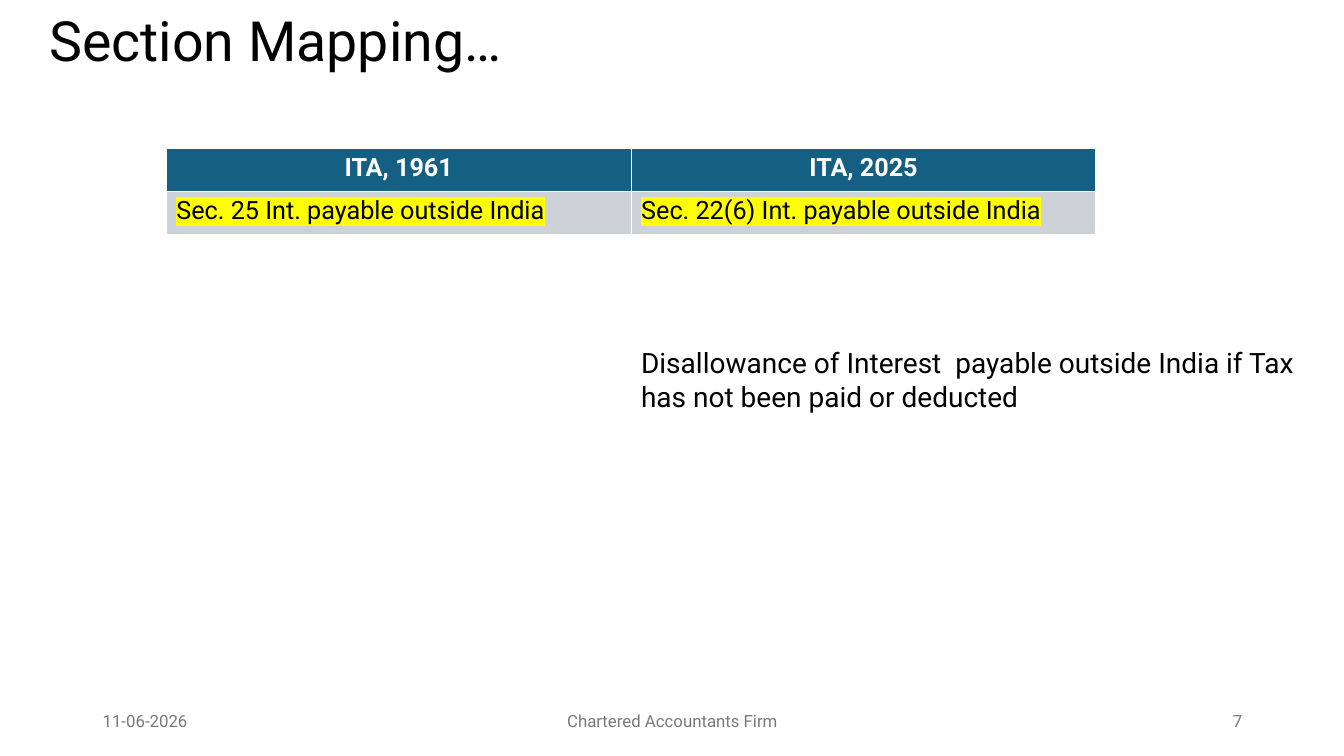
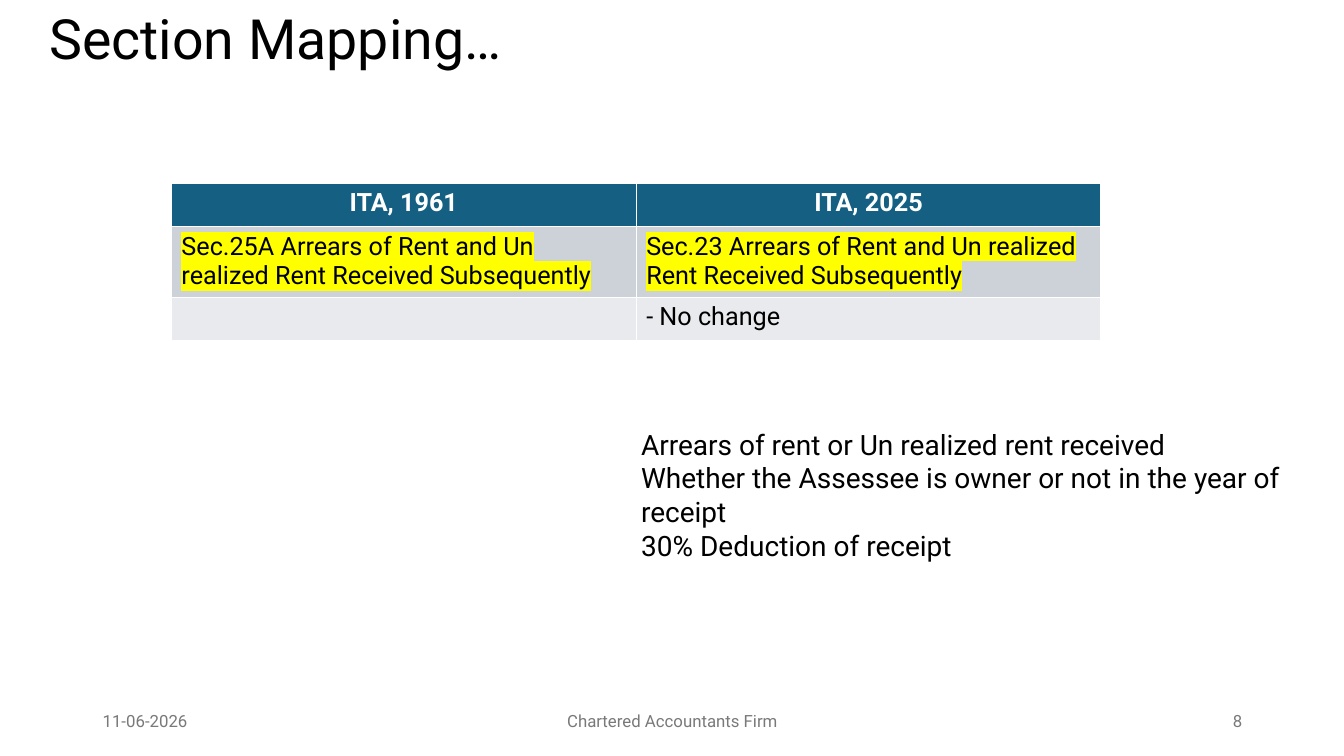
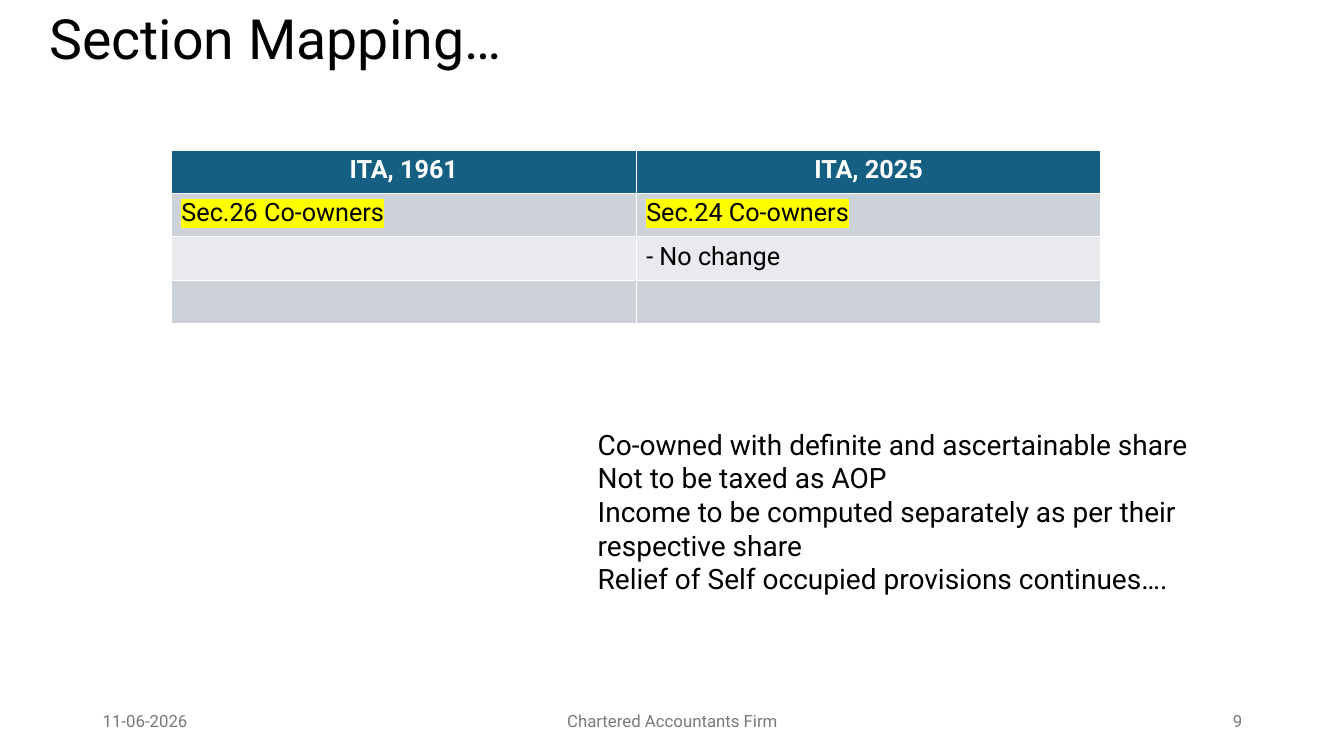
"""Build three section-mapping slides comparing the 1961 and 2025 Acts."""
from lxml import etree
from pptx import Presentation
from pptx.dml.color import RGBColor
from pptx.enum.text import MSO_ANCHOR, MSO_AUTO_SIZE, PP_ALIGN
from pptx.oxml.ns import qn
from pptx.util import Inches, Pt

LEFT, CENTER, RIGHT = PP_ALIGN.LEFT, PP_ALIGN.CENTER, PP_ALIGN.RIGHT
MIDDLE = MSO_ANCHOR.MIDDLE
NO_FIT, GROW = MSO_AUTO_SIZE.NONE, MSO_AUTO_SIZE.SHAPE_TO_FIT_TEXT

FONT = "Roboto"
BLACK = RGBColor(0x00, 0x00, 0x00)
WHITE = RGBColor(0xFF, 0xFF, 0xFF)
TEAL = RGBColor(0x15, 0x60, 0x82)
BAND_DARK = RGBColor(0xCC, 0xD2, 0xD8)
BAND_LIGHT = RGBColor(0xE8, 0xEA, 0xED)
GRAY = RGBColor(0x79, 0x79, 0x79)
YELLOW = RGBColor(0xFF, 0xFF, 0x00)

TITLE = "Section Mapping…"
HEADER = ("ITA, 1961", "ITA, 2025")
DATE = "11-06-2026"
FIRM = "Chartered Accountants Firm"
FIRST_NUMBER = 7
COLUMN_WIDTH = 4.61
ROW_HEIGHT = 0.43
NOTES_RIGHT = 13

PAGES = [
    {
        "title_size": (10.53, 0.68),
        "table_at": (1.65, 1.47),
        "section_height": ROW_HEIGHT,
        "rows": [("Sec. 25 Int. payable outside India",
                  "Sec. 22(6) Int. payable outside India")],
        "points_at": (6.26, 3.38, 0.77),
        "points": ["Disallowance of Interest  payable outside India "
                   "if Tax has not been paid or deducted"],
    },
    {
        "title_size": (10.07, 0.64),
        "table_at": (1.7, 1.82),
        "section_height": 0.7,
        "rows": [("Sec.25A Arrears of Rent and Un realized Rent Received Subsequently",
                  "Sec.23 Arrears of Rent and Un realized Rent Received Subsequently"),
                 ("", "- No change")],
        "points_at": (6.26, 4.19, 1.45),
        "points": ["Arrears of rent or Un realized rent received",
                   "Whether the Assessee is owner or not in the year of receipt",
                   "30% Deduction of receipt"],
    },
    {
        "title_size": (10.07, 0.64),
        "table_at": (1.7, 1.49),
        "section_height": ROW_HEIGHT,
        "rows": [("Sec.26 Co-owners", "Sec.24 Co-owners"),
                 ("", "- No change"),
                 ("", "")],
        "points_at": (5.83, 4.19, 1.78),
        "points": ["Co-owned with definite and ascertainable share",
                   "Not to be taxed as AOP",
                   "Income to be computed separately as per their respective share",
                   "Relief of Self occupied provisions continues…."],
    },
]


def write(frame, text, size, color, align=LEFT, bold=False):
    frame.text = text
    frame.word_wrap = True
    for paragraph in frame.paragraphs:
        paragraph.alignment = align
        for span in paragraph.runs:
            span.font.name = FONT
            span.font.size = Pt(size)
            span.font.bold = bold
            span.font.color.rgb = color


def highlight(frame):
    for span in frame.paragraphs[0].runs:
        mark = etree.Element(qn("a:highlight"))
        etree.SubElement(mark, qn("a:srgbClr"), val=str(YELLOW))
        span.font._element.find(qn("a:solidFill")).addnext(mark)


deck = Presentation()
deck.slide_width = Inches(13.33)
deck.slide_height = Inches(7.5)
title_only = deck.slide_layouts[5]

for number, content in enumerate(PAGES, FIRST_NUMBER):
    page = deck.slides.add_slide(title_only)

    title = page.shapes.title
    title.left, title.top = Inches(0.39), Inches(0.09)
    title.width, title.height = map(Inches, content["title_size"])
    write(title.text_frame, TITLE, 39.6, BLACK)
    title.text_frame.auto_size = NO_FIT
    title.text_frame.vertical_anchor = MIDDLE
    title.text_frame.paragraphs[0].line_spacing = 0.9

    rows = [HEADER] + content["rows"]
    heights = [ROW_HEIGHT] * len(rows)
    heights[1] = content["section_height"]
    left, top = content["table_at"]
    table = page.shapes.add_table(
        len(rows), len(HEADER), Inches(left), Inches(top),
        Inches(COLUMN_WIDTH * len(HEADER)), Inches(sum(heights))).table
    for column in table.columns:
        column.width = Inches(COLUMN_WIDTH)
    for row_index, texts in enumerate(rows):
        table.rows[row_index].height = Inches(heights[row_index])
        is_header = row_index == 0
        band = BAND_DARK if row_index % 2 else BAND_LIGHT
        for column_index, text in enumerate(texts):
            cell = table.cell(row_index, column_index)
            cell.fill.solid()
            cell.fill.fore_color.rgb = TEAL if is_header else band
            write(cell.text_frame, text, 18, WHITE if is_header else BLACK,
                  CENTER if is_header else LEFT, is_header)
            if row_index == 1:
                highlight(cell.text_frame)

    for left, width, text, align in [(0.92, 3, DATE, LEFT),
                                     (4.42, 4.5, FIRM, CENTER),
                                     (9.42, 3, str(number), RIGHT)]:
        footer = page.shapes.add_textbox(
            Inches(left), Inches(6.95), Inches(width), Inches(0.4))
        write(footer.text_frame, text, 12, GRAY, align)
        footer.text_frame.vertical_anchor = MIDDLE

    left, top, height = content["points_at"]
    points = page.shapes.add_textbox(
        Inches(left), Inches(top), Inches(NOTES_RIGHT - left), Inches(height))
    write(points.text_frame, "\n".join(content["points"]), 20, BLACK)
    points.text_frame.auto_size = GROW

deck.save("out.pptx")
